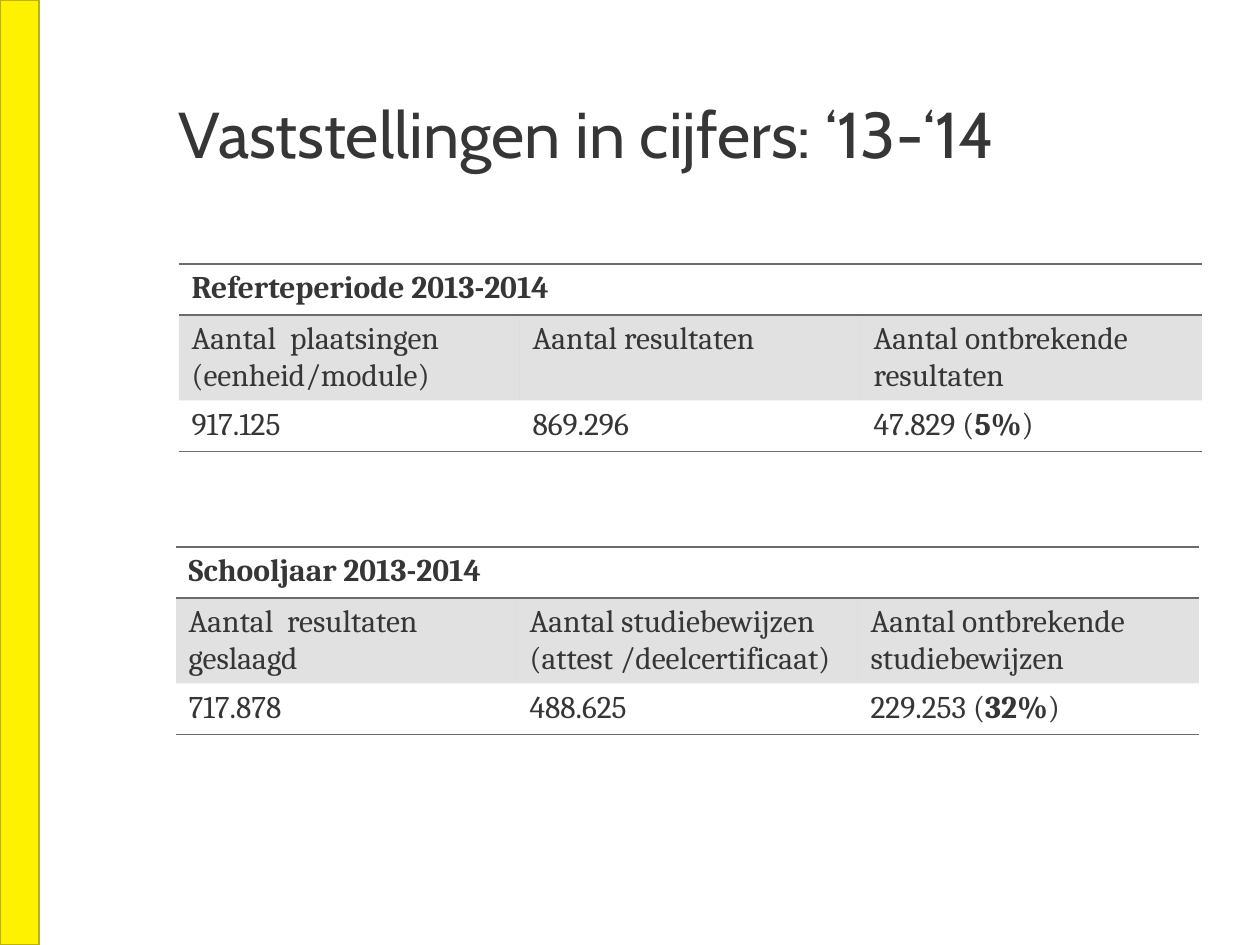
from dataclasses import dataclass

from lxml.etree import SubElement
from pptx import Presentation
from pptx.dml.color import RGBColor
from pptx.enum.shapes import MSO_SHAPE as Preset
from pptx.enum.text import MSO_ANCHOR as Anchor, MSO_AUTO_SIZE as AutoSize, PP_ALIGN as Align
from pptx.oxml import parse_xml
from pptx.oxml.ns import nsdecls, qn
from pptx.util import Emu, Pt

EMU_PER_PX = 914400 / 126
INK, GREY, YELLOW, OLIVE = "373636", "6B6B6B", "FFF200", "BDB300"
NO_STYLE = "{2D5ABB26-0587-4C30-8999-92F81FD0307C}"
COLUMN_WIDTH = 341
ROW_HEIGHTS = (51, 85, 51)
BORDERS = (("lnT", "lnB"), (), ("lnB",))


@dataclass(frozen=True)
class FigureTable:
    left: int
    top: int
    heading: str
    labels: tuple[str, ...]
    counts: tuple[str, ...]
    share: str


TABLES = (
    FigureTable(
        179, 264, "Referteperiode 2013-2014",
        ("Aantal  plaatsingen (eenheid/module)", "Aantal resultaten", "Aantal ontbrekende resultaten"),
        ("917.125", "869.296", "47.829"), "5%",
    ),
    FigureTable(
        176, 547, "Schooljaar 2013-2014",
        ("Aantal  resultaten geslaagd", "Aantal studiebewijzen (attest /deelcertificaat)",
         "Aantal ontbrekende studiebewijzen"),
        ("717.878", "488.625", "229.253"), "32%",
    ),
)


def px(length: int) -> Emu:
    """Turn pixels into EMU."""
    return Emu(round(length * EMU_PER_PX))


def color(value: str) -> RGBColor:
    """Turn a hex string into a colour."""
    return RGBColor.from_string(value)


def apply_format(target, values: dict) -> None:
    """Set every attribute named in the dict."""
    for name, value in values.items():
        setattr(target, name, value)


def add_run(paragraph, text: str, name: str, size: int, bold: bool = False) -> None:
    """Append a formatted run to a paragraph."""
    run = paragraph.add_run()
    run.text = text
    apply_format(run.font, {"name": name, "size": Pt(size), "bold": bold})
    run.font.color.rgb = color(INK)


def add_side_bar(slide) -> None:
    """Draw the yellow bar along the left edge."""
    bar = slide.shapes.add_shape(Preset.RECTANGLE, 0, 0, px(39), px(945))
    bar.shadow.inherit = False
    bar.fill.solid()
    bar.fill.fore_color.rgb = color(YELLOW)
    bar.line.color.rgb = color(OLIVE)
    bar.line.width = Pt(1)


def set_title(slide, text: str) -> None:
    """Place and format the title placeholder."""
    title = slide.shapes.title
    apply_format(title, {"left": px(179), "top": px(105), "width": px(1022), "height": px(154)})
    apply_format(title.text_frame, {
        "margin_left": 0, "margin_top": 0, "margin_right": 0, "margin_bottom": 0,
        "vertical_anchor": Anchor.TOP, "word_wrap": True, "auto_size": AutoSize.NONE,
    })
    paragraph = title.text_frame.paragraphs[0]
    apply_format(paragraph, {"alignment": Align.LEFT, "line_spacing": Pt(38)})
    add_run(paragraph, text, "Cabin", 37)


def style_cell(cell, borders: tuple[str, ...], shaded: bool) -> None:
    """Set the fill and the horizontal borders of a cell."""
    properties = cell._tc.get_or_add_tcPr()
    if shaded:
        cell.fill.solid()
        cell.fill.fore_color.rgb = color(GREY)
        SubElement(properties.find(".//" + qn("a:srgbClr")), qn("a:alpha"), val="20000")
    else:
        cell.fill.background()
    for index, tag in enumerate(borders):
        properties.insert(index, parse_xml(
            f'<a:{tag} {nsdecls("a")} w="{Pt(1)}"><a:solidFill>'
            f'<a:srgbClr val="{GREY}"/></a:solidFill></a:{tag}>'
        ))


def add_figure_table(slide, figures: FigureTable) -> None:
    """Add a table with a heading, a shaded label row and a row of counts."""
    columns = len(figures.labels)
    frame = slide.shapes.add_table(
        len(ROW_HEIGHTS), columns, px(figures.left), px(figures.top),
        px(COLUMN_WIDTH * columns), px(sum(ROW_HEIGHTS)),
    )
    table = frame.table
    apply_format(table, {"first_row": False, "horz_banding": False})
    table._tbl.tblPr.find(qn("a:tableStyleId")).text = NO_STYLE
    for column in table.columns:
        column.width = px(COLUMN_WIDTH)
    for row, height, borders in zip(table.rows, ROW_HEIGHTS, BORDERS):
        row.height = px(height)
        for cell in row.cells:
            style_cell(cell, borders, shaded=not borders)
    table.cell(0, 0).merge(table.cell(0, columns - 1))

    for row, texts in enumerate(((figures.heading,), figures.labels, figures.counts)):
        for column, text in enumerate(texts):
            paragraph = table.cell(row, column).text_frame.paragraphs[0]
            add_run(paragraph, text, "Cambria", 18, bold=row == 0)
    for text, bold in ((" (", False), (figures.share, True), (")", False)):
        add_run(paragraph, text, "Cambria", 18, bold)


def main() -> None:
    """Build and save the presentation."""
    presentation = Presentation()
    apply_format(presentation, {"slide_width": px(1260), "slide_height": px(945)})
    slide = presentation.slides.add_slide(presentation.slide_layouts[5])
    add_side_bar(slide)
    set_title(slide, "Vaststellingen in cijfers: ‘13-‘14")
    for figures in TABLES:
        add_figure_table(slide, figures)
    presentation.save("out.pptx")


if __name__ == "__main__":
    main()
